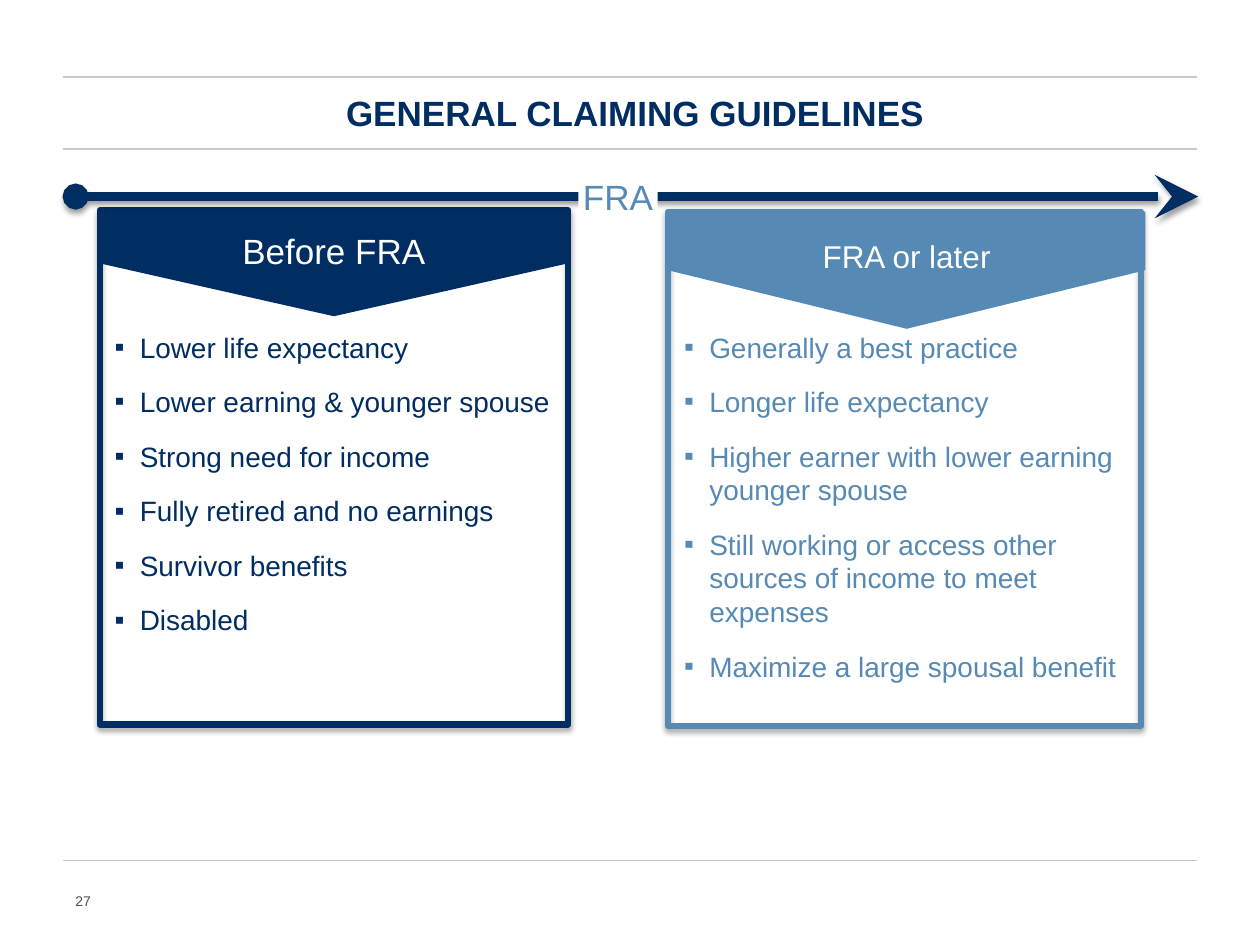
"""Build the slide on general claiming guidelines."""
from dataclasses import dataclass

from lxml.etree import SubElement
from pptx import Presentation
from pptx.dml.color import RGBColor
from pptx.enum.shapes import MSO_CONNECTOR, MSO_SHAPE
from pptx.enum.text import MSO_ANCHOR, PP_ALIGN
from pptx.oxml.ns import qn
from pptx.util import Inches, Pt


@dataclass(frozen=True)
class Theme:
    """Colours, font and type sizes of the slide."""

    font: str = "Arial"
    navy: str = "002D62"
    blue: str = "568AB4"
    white: str = "FFFFFF"
    rule: str = "C8C8C8"
    grey: str = "4D4F53"
    title: int = 20
    later: int = 18
    body: int = 16
    number: int = 8


THEME = Theme()
BEFORE = [
    "Lower life expectancy",
    "Lower earning & younger spouse",
    "Strong need for income",
    "Fully retired and no earnings",
    "Survivor benefits",
    "Disabled",
]
LATER = [
    "Generally a best practice",
    "Longer life expectancy",
    "Higher earner with lower earning younger spouse",
    "Still working or access other sources of income to meet expenses",
    "Maximize a large spousal benefit",
]


def write_text(box, *lines, size, color, bold=False, align=PP_ALIGN.LEFT,
               anchor=MSO_ANCHOR.MIDDLE, inset=True, bullet=False):
    """Fill a box with one formatted paragraph per line."""
    frame = box.text_frame
    frame.word_wrap = True
    frame.vertical_anchor = anchor
    if not inset:
        frame.margin_left = frame.margin_right = 0
        frame.margin_top = frame.margin_bottom = 0
    for index, line in enumerate(lines):
        para = frame.add_paragraph() if index else frame.paragraphs[0]
        para.alignment = align
        if bullet:
            add_bullet(para)
        span = para.add_run()
        span.text = line
        span.font.name = THEME.font
        span.font.size = Pt(size)
        span.font.bold = bold
        span.font.color.rgb = RGBColor.from_string(color)


def add_bullet(para):
    """Give a paragraph a square bullet, a hanging indent and space after."""
    para.space_after = Pt(12)
    properties = para._p.get_or_add_pPr()
    properties.set("marL", str(Inches(0.2)))
    properties.set("indent", str(-Inches(0.2)))
    SubElement(properties, qn("a:buFont"), typeface=THEME.font)
    SubElement(properties, qn("a:buChar"), char="▪")


def add_shadow(effects, opacity, distance):
    """Put a soft downward shadow in an effect list."""
    shadow = SubElement(effects, qn("a:outerShdw"), blurRad=str(Pt(3.1)),
                        dist=str(Pt(distance)), dir="5400000", rotWithShape="0")
    color = SubElement(shadow, qn("a:srgbClr"), val="000000")
    SubElement(color, qn("a:alpha"), val=str(opacity * 1000))


def add_text_box(page, left, top, width, height, *lines, **style):
    """Add a text box with formatted lines."""
    box = page.shapes.add_textbox(Inches(left), Inches(top), Inches(width), Inches(height))
    write_text(box, *lines, **style)


def add_block(page, preset, left, top, width, height, fill=None):
    """Add a preset shape with an optional plain fill and no outline."""
    block = page.shapes.add_shape(
        preset, Inches(left), Inches(top), Inches(width), Inches(height))
    block.shadow.inherit = False
    block.line.fill.background()
    if fill:
        block.fill.solid()
        block.fill.fore_color.rgb = RGBColor.from_string(fill)
    else:
        block.fill.background()
    return block


def add_line(page, left, right, y, color, weight):
    """Add a horizontal line and return it with its empty effect list."""
    line = page.shapes.add_connector(
        MSO_CONNECTOR.STRAIGHT, Inches(left), Inches(y), Inches(right), Inches(y))
    line.line.color.rgb = RGBColor.from_string(color)
    line.line.width = Pt(weight)
    return line, SubElement(line._element.spPr, qn("a:effectLst"))


def add_timeline(page):
    """Add the arrow that runs from a dot to a stealth head."""
    arrow, effects = add_line(page, 0.6, 9.51, 1.56, THEME.navy, 5)
    outline = arrow.line._get_or_add_ln()
    SubElement(outline, qn("a:headEnd"), type="oval", w="med", len="med")
    SubElement(outline, qn("a:tailEnd"), type="stealth", w="lg", len="lg")
    add_shadow(effects, 38, 1.6)


def add_frame(page, left, top, width, height, color):
    """Add the shadowed outline of a card."""
    frame = add_block(page, MSO_SHAPE.RECTANGLE, left, top, width, height)
    frame.line.color.rgb = RGBColor.from_string(color)
    frame.line.width = Pt(3.5)
    SubElement(frame.line._get_or_add_ln(), qn("a:round"))
    add_shadow(frame._element.spPr.find(qn("a:effectLst")), 35, 1.8)


def add_header(page, label, left, top, width, height, color, size):
    """Add a downward pentagon whose label stays upright."""
    header = add_block(page, MSO_SHAPE.PENTAGON, left + (width - height) / 2,
                       top + (height - width) / 2, height, width, color)
    header.rotation = 90
    header._element.txBody.bodyPr.set("vert", "vert270")
    write_text(header, label, size=size, color=THEME.white, align=PP_ALIGN.CENTER)


def add_card(page, label, items, left, top, width, head_width, head_height,
             text_left, color, size):
    """Add a framed card with a pentagon header and a bulleted list."""
    add_frame(page, left, top, width, 4.08, color)
    add_header(page, label, left, top, head_width, head_height, color, size)
    add_text_box(page, text_left, 2.62, 3.53, 3.1, *items, size=THEME.body, color=color,
                 anchor=MSO_ANCHOR.TOP, inset=False, bullet=True)


def main():
    """Build and save the slide."""
    deck = Presentation()
    deck.slide_width, deck.slide_height = Inches(10), Inches(7.5)
    page = deck.slides.add_slide(deck.slide_layouts[6])
    for y in (0.61, 1.18, 6.83):
        add_line(page, 0.5, 9.5, y, THEME.rule, 1)
    add_text_box(page, 0.79, 0.61, 8.5, 0.56, "GENERAL CLAIMING GUIDELINES",
                 size=THEME.title, color=THEME.navy, bold=True, align=PP_ALIGN.CENTER)
    add_card(page, "FRA or later", LATER, 5.3, 1.68, 3.76, 3.79, 0.93, 5.43,
             THEME.blue, THEME.later)
    add_card(page, "Before FRA", BEFORE, 0.79, 1.67, 3.72, 3.72, 0.84, 0.91,
             THEME.navy, THEME.title)
    add_timeline(page)
    marker = add_block(page, MSO_SHAPE.RECTANGLE, 4.59, 1.39, 0.63, 0.34, THEME.white)
    write_text(marker, "FRA", size=THEME.title, color=THEME.blue,
               align=PP_ALIGN.CENTER, anchor=MSO_ANCHOR.TOP, inset=False)
    add_text_box(page, 0.5, 6.95, 2.33, 0.4, "27", size=THEME.number, color=THEME.grey)
    deck.save("out.pptx")


if __name__ == "__main__":
    main()
